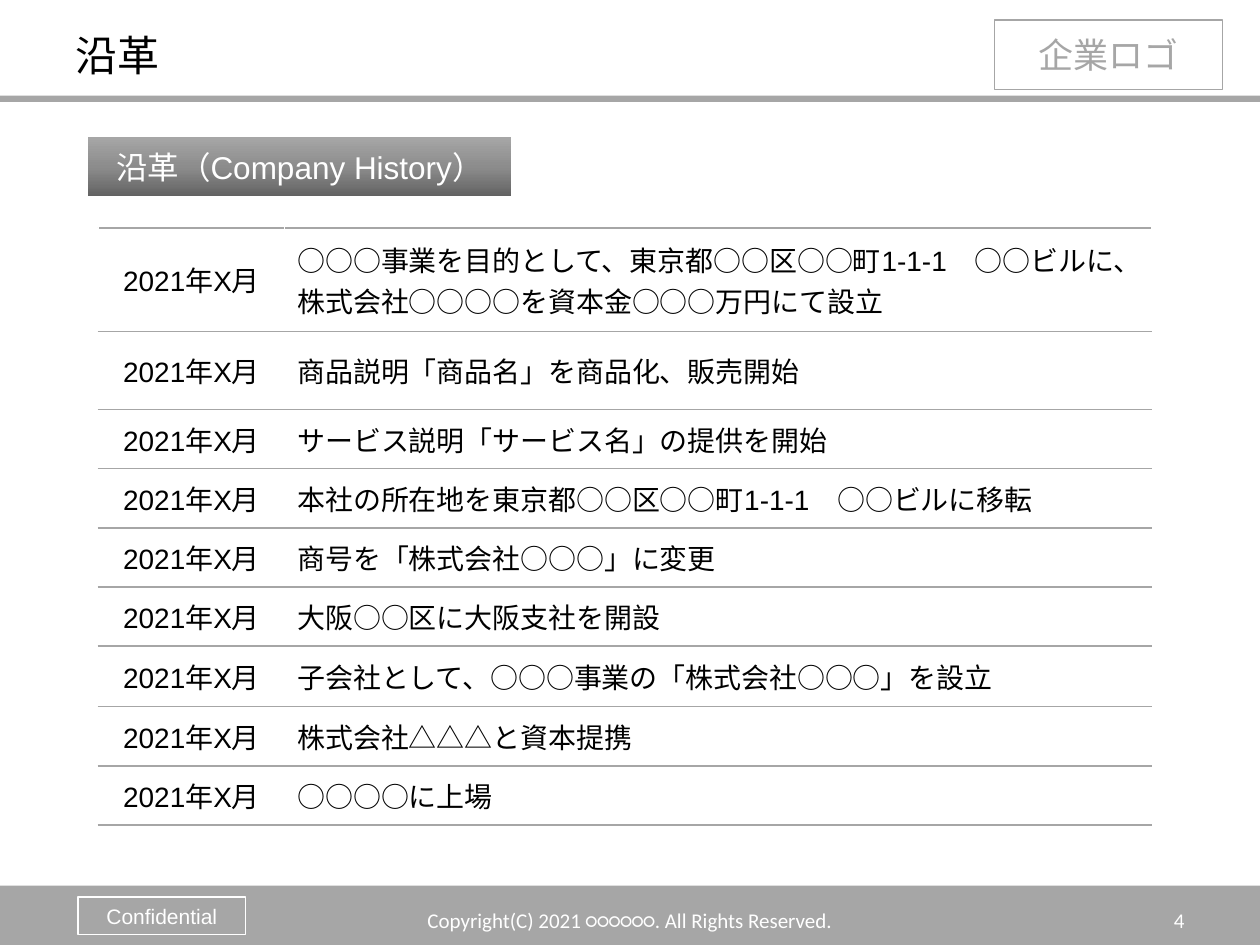
from copy import deepcopy

from lxml import etree
from pptx import Presentation
from pptx.dml.color import RGBColor
from pptx.enum.shapes import MSO_SHAPE
from pptx.enum.text import MSO_ANCHOR, PP_ALIGN
from pptx.oxml.ns import qn
from pptx.util import Inches, Pt

RECTANGLE = MSO_SHAPE.RECTANGLE
MIDDLE = MSO_ANCHOR.MIDDLE
LEFT, CENTER, RIGHT = PP_ALIGN.LEFT, PP_ALIGN.CENTER, PP_ALIGN.RIGHT

GRAY, WHITE, BLACK = "A6A6A6", "FFFFFF", "000000"
HEADING_STOPS = [(0, "626262"), (0.5, "8C8C8C"), (1, GRAY)]
DATE = "2021年X月"
DATE_WIDTH = 1.48
HISTORY = [
    (0.82, ["○○○事業を目的として、東京都○○区○○町1-1-1　○○ビルに、",
            "株式会社○○○○を資本金○○○万円にて設立"]),
    (0.62, ["商品説明「商品名」を商品化、販売開始"]),
    (0.47, ["サービス説明「サービス名」の提供を開始"]),
    (0.47, ["本社の所在地を東京都○○区○○町1-1-1　○○ビルに移転"]),
    (0.47, ["商号を「株式会社○○○」に変更"]),
    (0.47, ["大阪○○区に大阪支社を開設"]),
    (0.48, ["子会社として、○○○事業の「株式会社○○○」を設立"]),
    (0.47, ["株式会社△△△と資本提携"]),
    (0.47, ["○○○○に上場"]),
]


def color(hex_string):
    return RGBColor.from_string(hex_string)


def write(text_frame, lines, size, font, text_color, align):
    text_frame.word_wrap = True
    for index, line in enumerate(lines):
        paragraph = text_frame.add_paragraph() if index else text_frame.paragraphs[0]
        paragraph.alignment = align
        run = paragraph.add_run()
        run.text = line
        run.font.size = Pt(size)
        run.font.name = font
        run.font.color.rgb = color(text_color)


def add_text(slide, box, text, size, text_color, align):
    shape = slide.shapes.add_textbox(*map(Inches, box))
    shape.text_frame.vertical_anchor = MIDDLE
    write(shape.text_frame, [text], size, "Calibri", text_color, align)


def add_rectangle(slide, box, fill=None, line=None):
    shape = slide.shapes.add_shape(RECTANGLE, *map(Inches, box))
    shape.shadow.inherit = False
    shape.text_frame.vertical_anchor = MIDDLE
    if fill:
        shape.fill.solid()
        shape.fill.fore_color.rgb = color(fill)
    else:
        shape.fill.background()
    if line:
        shape.line.color.rgb = color(line)
        shape.line.width = Pt(0.75)
    else:
        shape.line.fill.background()
    return shape


def add_header(slide, left, top, width, height):
    add_rectangle(slide, (left, top + height - 0.05, width, 0.05), fill=GRAY)
    logo = add_rectangle(slide, (left + width - 2.11, top + 0.16, 1.81, 0.55), line=GRAY)
    write(logo.text_frame, ["企業ロゴ"], 20, "Calibri", GRAY, CENTER)
    add_text(slide, (left + 0.5, top + 0.16, 7.24, 0.55), "沿革", 24, BLACK, LEFT)


def add_footer(slide, left, top, width, height):
    add_rectangle(slide, (left, top, width, height), fill=GRAY)
    label = add_rectangle(slide, (left + 0.62, top + 0.09, 1.33, 0.3), line=WHITE)
    write(label.text_frame, ["Confidential"], 12, "Arial", WHITE, CENTER)
    add_text(slide, (left + width - 2.83, top + 0.07, 2.33, 0.4), "4", 12, WHITE, RIGHT)
    add_text(slide, (left + 2.91, top + 0.07, 4.18, 0.4),
             "Copyright(C) 2021 ○○○○○○. All Rights Reserved.", 12, WHITE, CENTER)


def add_heading(slide, left, top, width, height):
    heading = add_rectangle(slide, (left, top, width, height))
    heading.fill.gradient()
    heading.fill.gradient_angle = 90
    stop_list = heading._element.spPr.find(qn("a:gradFill")).find(qn("a:gsLst"))
    stop_list.insert(1, deepcopy(stop_list[0]))
    for stop, (position, stop_color) in zip(heading.fill.gradient_stops, HEADING_STOPS):
        stop.position = position
        stop.color.rgb = color(stop_color)
    write(heading.text_frame, ["沿革（Company History）"], 18, "Arial", WHITE, CENTER)


def set_borders(cell):
    properties = cell._tc.get_or_add_tcPr()
    for index, side in enumerate(("a:lnT", "a:lnB")):
        line = etree.Element(qn(side), w=str(Pt(1)))
        fill = etree.SubElement(line, qn("a:solidFill"))
        etree.SubElement(fill, qn("a:srgbClr"), val=GRAY)
        properties.insert(index, line)


def add_history(slide, left, top, width, height):
    frame = slide.shapes.add_table(
        len(HISTORY), 2, Inches(left), Inches(top), Inches(width), Inches(height))
    table = frame.table
    table.first_row = False
    table.horz_banding = False
    table.columns[0].width = Inches(DATE_WIDTH)
    table.columns[1].width = Inches(width - DATE_WIDTH)
    for row, (row_height, event) in zip(table.rows, HISTORY):
        row.height = Inches(row_height)
        for cell, lines, align in zip(row.cells, ([DATE], event), (CENTER, LEFT)):
            cell.fill.background()
            cell.vertical_anchor = MIDDLE
            write(cell.text_frame, lines, 16, "Arial", BLACK, align)
            set_borders(cell)


def main():
    presentation = Presentation()
    presentation.slide_width = Inches(10)
    presentation.slide_height = Inches(7.5)
    slide = presentation.slides.add_slide(presentation.slide_layouts[6])
    add_header(slide, 0, 0, 10, 0.81)
    add_footer(slide, 0, 7.03, 10, 0.47)
    add_history(slide, 0.78, 1.81, 8.36, 4.75)
    add_heading(slide, 0.7, 1.09, 3.36, 0.47)
    presentation.save("out.pptx")


if __name__ == "__main__":
    main()
